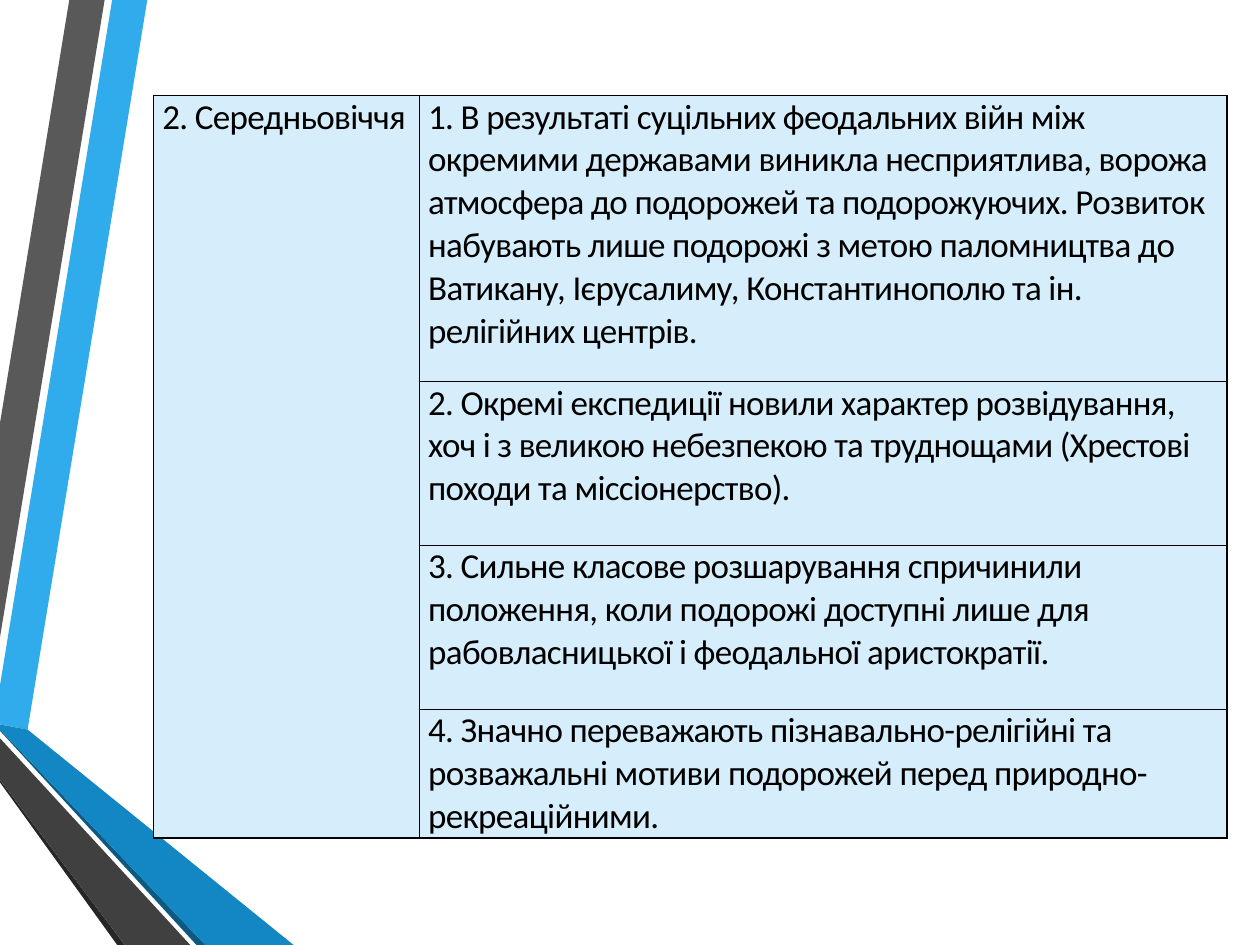
from lxml import etree
from pptx import Presentation
from pptx.dml.color import RGBColor
from pptx.oxml.ns import qn
from pptx.util import Pt

BLANK_LAYOUT = 6
FONT = "Calibri"
COLORS = {
    "sky": "30ACEC",
    "gray": "595959",
    "black shade": "262626",
    "navy shade": "0C5A82",
    "blue": "1287C3",
    "charcoal": "404040",
    "cell": "D6EEFB",
    "ink": "000000",
}

# Ribbons from back to front: colour and corner points
RIBBONS = [
    ("sky", [(0, 391.7), (0, 414), (15.8, 416.9), (84.2, 0), (64.1, 0)]),
    ("gray", [(59.8, 0), (39.6, 0), (0, 241.9), (0, 364.3)]),
    ("black shade", [(0, 445.7), (0, 447.1), (67, 540), (71.3, 540)]),
    ("navy shade", [(0, 416.9), (0, 417.6), (112.3, 540), (117.4, 540)]),
    ("blue", [(0, 416.9), (117.4, 540), (167.8, 540), (15.8, 416.9), (0, 414)]),
    ("charcoal", [(0, 445.7), (71.3, 540), (108.7, 540), (0, 421.9)]),
]

PERIOD = "2. Середньовіччя"
FEATURES = [
    "1. В результаті суцільних феодальних війн між окремими державами виникла "
    "несприятлива, ворожа атмосфера до подорожей та подорожуючих. Розвиток "
    "набувають лише подорожі з метою паломництва до Ватикану, Ієрусалиму, "
    "Константинополю та ін. релігійних центрів.",
    "2. Окремі експедиції новили характер розвідування, хоч і з великою "
    "небезпекою та труднощами (Хрестові походи та міссіонерство).",
    "3. Сильне класове розшарування спричинили положення, коли подорожі "
    "доступні лише для рабовласницької і феодальної аристократії.",
    "4. Значно переважають пізнавально-релігійні та розважальні мотиви "
    "подорожей перед природно-рекреаційними.",
]
COLUMN_WIDTHS = [151.9, 461.5]
ROW_HEIGHTS = [163.4, 93.6, 93.6, 71.3]


def paint(fill, color):
    fill.solid()
    fill.fore_color.rgb = RGBColor.from_string(COLORS[color])


def add_ribbon(slide, color, corners):
    points = [(Pt(x), Pt(y)) for x, y in corners]
    builder = slide.shapes.build_freeform(*points[0])
    builder.add_line_segments(points[1:], close=True)
    ribbon = builder.convert_to_shape()
    ribbon.shadow.inherit = False
    paint(ribbon.fill, color)
    ribbon.line.fill.background()


def add_borders(cell):
    """Put a thin line on all four sides, ahead of the cell's fill."""
    properties = cell._tc.get_or_add_tcPr()
    for index, side in enumerate(("lnL", "lnR", "lnT", "lnB")):
        line = etree.Element(qn(f"a:{side}"), w=str(Pt(1)))
        solid = etree.SubElement(line, qn("a:solidFill"))
        etree.SubElement(solid, qn("a:srgbClr"), val=COLORS["ink"])
        properties.insert(index, line)


def style_cell(cell):
    cell.margin_left = cell.margin_right = Pt(5)
    cell.margin_top = cell.margin_bottom = 0
    paint(cell.fill, "cell")
    add_borders(cell)


def write_cell(cell, text):
    span = cell.text_frame.paragraphs[0].add_run()
    span.text = text
    span.font.name = FONT
    span.font.size = Pt(20)
    span.font.color.rgb = RGBColor.from_string(COLORS["ink"])
    span.font._element.set("spc", "-40")


def add_period_table(slide):
    frame = slide.shapes.add_table(
        len(FEATURES), len(COLUMN_WIDTHS), Pt(87.8), Pt(54.7),
        Pt(sum(COLUMN_WIDTHS)), Pt(sum(ROW_HEIGHTS)))
    table = frame.table
    table.first_row = table.horz_banding = False
    for column, width in zip(table.columns, COLUMN_WIDTHS):
        column.width = Pt(width)
    for row, height in zip(table.rows, ROW_HEIGHTS):
        row.height = Pt(height)
    for cell in table.iter_cells():
        style_cell(cell)
    table.cell(0, 0).merge(table.cell(len(FEATURES) - 1, 0))
    write_cell(table.cell(0, 0), PERIOD)
    for index, feature in enumerate(FEATURES):
        write_cell(table.cell(index, 1), feature)


def main():
    deck = Presentation()
    deck.slide_width, deck.slide_height = Pt(720), Pt(540)
    slide = deck.slides.add_slide(deck.slide_layouts[BLANK_LAYOUT])
    for color, corners in RIBBONS:
        add_ribbon(slide, color, corners)
    add_period_table(slide)
    deck.save("out.pptx")


if __name__ == "__main__":
    main()
